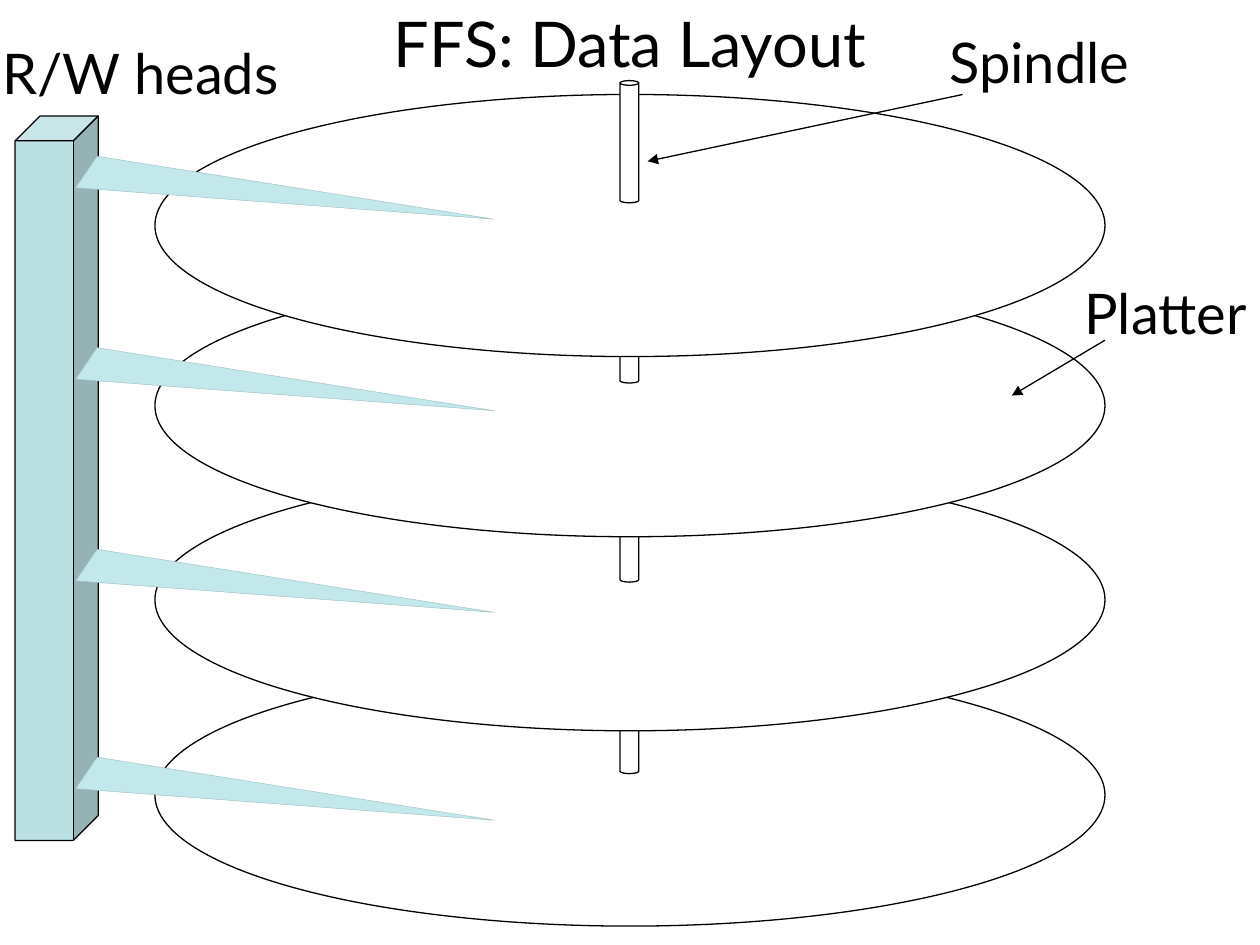
from lxml import etree
from pptx import Presentation
from pptx.dml.color import RGBColor
from pptx.enum import shapes, text
from pptx.oxml import ns
from pptx.util import Inches, Pt

FONT = "Lato"
BLACK, WHITE, TEAL = "000000", "FFFFFF", "BBE0E3"
ARM_FILL, ARM_EDGE = "C2E8EB", "9DBFC2"

TITLE = ("FFS: Data Layout", (0.75, 0, 8.5, 0.67))
HEADS_LABEL = ("R/W heads", (-0.17, 0.26, 2.57, 0.64))
# label, its box, arrow start, arrow end
CALLOUTS = [
    ("Platter", (8.49, 2.16, 1.52, 0.64), (8.77, 2.7), (8.03, 3.14)),
    ("Spindle", (7.41, 0.17, 1.68, 0.64), (7.64, 0.75), (5.14, 1.28)),
]
# platter top, spindle top, spindle height; lowest platter first
LEVELS = [(5.27, 5.52, 0.62), (3.72, 4, 0.62), (2.18, 2.42, 0.62), (0.75, 0.64, 0.97)]
PLATTER_LEFT, PLATTER_WIDTH, PLATTER_HEIGHT = 1.23, 7.54, 2.08
SPINDLE_LEFT, SPINDLE_WIDTH = 4.92, 0.15
ACTUATOR = (0.12, 0.92, 0.66, 5.75)
ARM_TOPS = [1.24, 2.76, 4.36, 6.01]
ARM_CORNERS = [(0.77, 0), (3.92, 0.5), (0.6, 0.25)]  # x, drop below the arm's top


def rgb(hex_color):
    return RGBColor.from_string(hex_color)


def paint(shape, fill, line=BLACK, width=0.75):
    shape.shadow.inherit = False
    shape.fill.solid()
    shape.fill.fore_color.rgb = rgb(fill)
    shape.line.color.rgb = rgb(line)
    shape.line.width = Pt(width)


def add_solid(parent, kind, box, fill=WHITE):
    shape = parent.add_shape(kind, *map(Inches, box))
    paint(shape, fill)
    return shape


def write(frame, words, size=32, color=BLACK, anchor=text.MSO_ANCHOR.TOP,
          fit=text.MSO_AUTO_SIZE.SHAPE_TO_FIT_TEXT):
    frame.word_wrap = True
    frame.auto_size = fit
    frame.vertical_anchor = anchor
    paragraph = frame.paragraphs[0]
    paragraph.alignment = text.PP_ALIGN.CENTER
    run = paragraph.add_run()
    run.text = words
    run.font.name = FONT
    run.font.size = Pt(size)
    run.font.color.rgb = rgb(color)


def add_label(parent, words, box):
    write(parent.add_textbox(*map(Inches, box)).text_frame, words)


def add_arrow(parent, start, end):
    arrow = parent.add_connector(shapes.MSO_CONNECTOR.STRAIGHT, *map(Inches, start + end))
    arrow.line.color.rgb = rgb(BLACK)
    arrow.line.width = Pt(0.75)
    etree.SubElement(arrow.line._get_or_add_ln(), ns.qn("a:tailEnd"), type="triangle")
    etree.SubElement(arrow._element.spPr, ns.qn("a:effectLst"))


def add_arm(parent, top):
    first, *others = [(Inches(x), Inches(top + drop)) for x, drop in ARM_CORNERS]
    outline = parent.build_freeform(*first)
    outline.add_line_segments(others, close=True)
    paint(outline.convert_to_shape(), ARM_FILL, ARM_EDGE, 0.25)


def main():
    deck = Presentation()
    deck.slide_width, deck.slide_height = Inches(10), Inches(7.5)
    slide = deck.slides.add_slide(deck.slide_layouts[5])

    words, box = TITLE
    title = slide.shapes.title
    title.left, title.top, title.width, title.height = map(Inches, box)
    write(title.text_frame, words, size=36, anchor=text.MSO_ANCHOR.MIDDLE,
          fit=text.MSO_AUTO_SIZE.NONE)

    for platter_top, spindle_top, spindle_height in LEVELS:
        add_solid(slide.shapes, shapes.MSO_SHAPE.OVAL,
                  (PLATTER_LEFT, platter_top, PLATTER_WIDTH, PLATTER_HEIGHT))
        add_solid(slide.shapes, shapes.MSO_SHAPE.CAN,
                  (SPINDLE_LEFT, spindle_top, SPINDLE_WIDTH, spindle_height))

    heads = slide.shapes.add_group_shape().shapes
    actuator = add_solid(heads, shapes.MSO_SHAPE.CUBE, ACTUATOR, TEAL)
    actuator.adjustments[0] = 0.3
    for top in ARM_TOPS:
        add_arm(heads, top)
    add_label(heads, *HEADS_LABEL)

    for words, box, start, end in CALLOUTS:
        callout = slide.shapes.add_group_shape().shapes
        add_label(callout, words, box)
        add_arrow(callout, start, end)

    deck.save("out.pptx")


if __name__ == "__main__":
    main()
